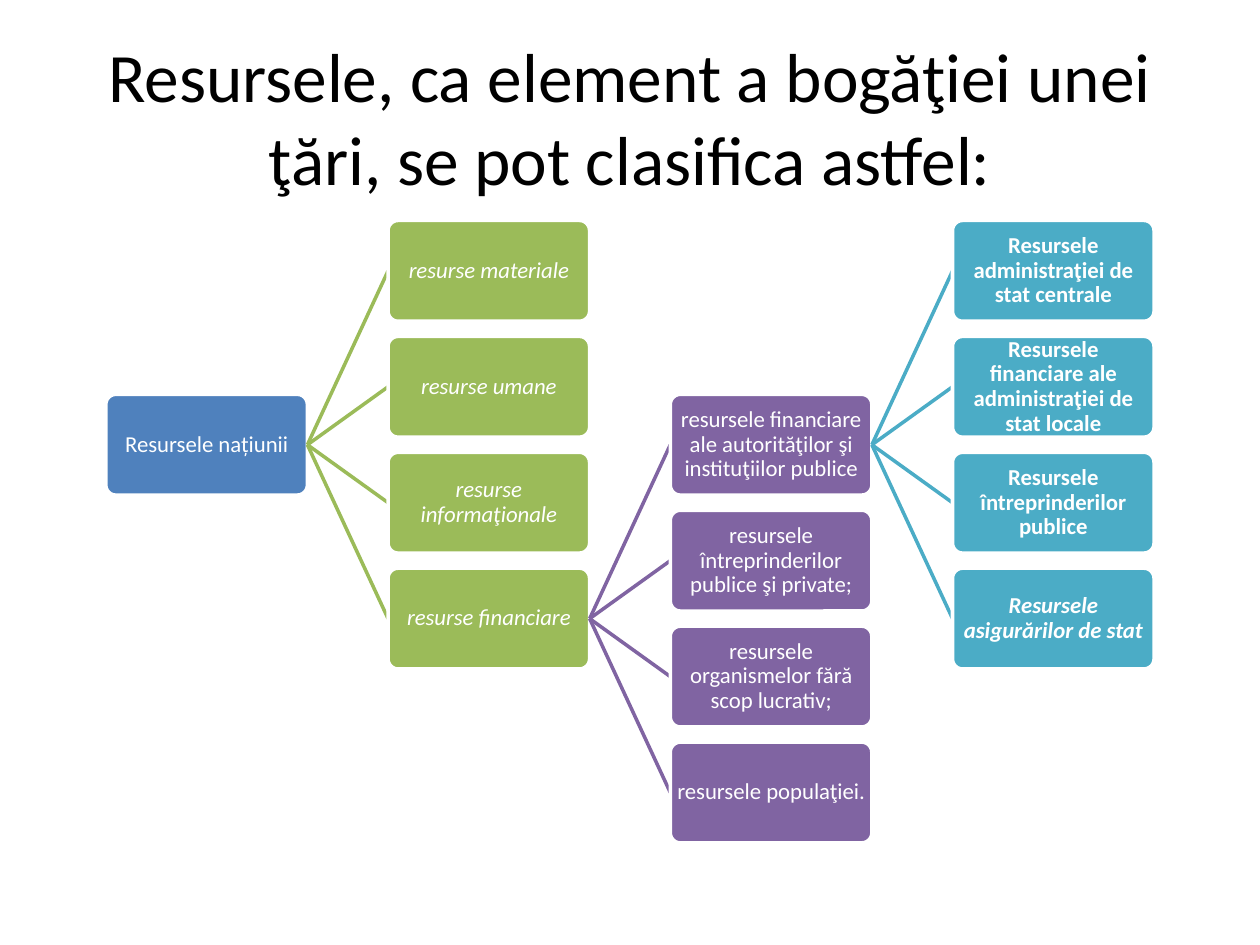
import pptx
import pptx.dml.color
import pptx.enum.shapes
import pptx.enum.text
import pptx.oxml.ns
import pptx.util
from lxml import etree
from pptx.util import Inches

LEFT, TOP = 0.84, 1.75
COLUMN_STEP, ROW_STEP = 2.24, 0.92
BOX_WIDTH, BOX_HEIGHT = 1.6, 0.8
RIGHT_SIDE, LEFT_SIDE = 3, 1
BLUE, GREEN, PURPLE, TEAL = "4F81BD", "9BBB59", "8064A2", "4BACC6"
WHITE, BLACK = "FFFFFF", "000000"
ITALIC, BOLD = {"italic": True}, {"bold": True}

MATERIAL_KINDS = [
    ("resurse materiale", ITALIC),
    ("resurse umane", ITALIC),
    ("resurse informaţionale", ITALIC),
    ("resurse financiare", ITALIC),
]
FINANCIAL_KINDS = [
    ("resursele financiare ale autorităţilor şi instituţiilor publice", {}),
    ("resursele întreprinderilor publice şi private;", {}),
    ("resursele organismelor fără scop lucrativ;", {}),
    ("resursele populaţiei.", {}),
]
PUBLIC_KINDS = [
    ("Resursele administraţiei de stat centrale", BOLD),
    ("Resursele financiare ale administraţiei de stat locale", BOLD),
    ("Resursele întreprinderilor publice", BOLD),
    ("Resursele asigurărilor de stat", {**BOLD, **ITALIC}),
]


def rgb(value):
    return pptx.dml.color.RGBColor.from_string(value)


def set_all(target, values):
    for name, value in values.items():
        setattr(target, name, value)


def write(shape, text, size, color, inset, spacing=1.0, style=None):
    """Put one centred paragraph into the shape."""
    frame = shape.text_frame
    margins = ("margin_left", "margin_top", "margin_right", "margin_bottom")
    set_all(frame, dict.fromkeys(margins, Inches(inset)))
    set_all(frame, {
        "word_wrap": True,
        "vertical_anchor": pptx.enum.text.MSO_ANCHOR.MIDDLE,
    })
    para = frame.paragraphs[0]
    set_all(para, {
        "alignment": pptx.enum.text.PP_ALIGN.CENTER,
        "line_spacing": spacing,
    })
    span = para.add_run()
    span.text = text
    font = {"name": "Calibri", "size": pptx.util.Pt(size), **(style or {})}
    set_all(span.font, font)
    span.font.color.rgb = rgb(color)


def add_title(page, text):
    box = page.shapes.add_textbox(
        Inches(0.5), Inches(0.3), Inches(9), Inches(1.25))
    write(box, text, 39.6, BLACK, 0.1)


def add_node(page, column, row, text, color, style=None):
    box = page.shapes.add_shape(
        pptx.enum.shapes.MSO_SHAPE.ROUNDED_RECTANGLE,
        Inches(LEFT + column * COLUMN_STEP), Inches(TOP + row * ROW_STEP),
        Inches(BOX_WIDTH), Inches(BOX_HEIGHT))
    box.adjustments[0] = 0.1
    box.shadow.inherit = False
    box.fill.solid()
    box.fill.fore_color.rgb = rgb(color)
    box.line.color.rgb = rgb(WHITE)
    box.line.width = pptx.util.Pt(2)
    write(box, text, 13, WHITE, 0.03, 0.9, style)
    return box


def add_link(page, color):
    link = page.shapes.add_connector(
        pptx.enum.shapes.MSO_CONNECTOR.STRAIGHT, 0, 0, 0, 0)
    link.line.color.rgb = rgb(color)
    link.line.width = pptx.util.Pt(2)
    etree.SubElement(
        link._element.spPr, pptx.oxml.ns.qn("a:effectLst"))
    return link


def add_branch(page, parent, column, first_row, color, entries):
    """Add a column of nodes, each linked to the parent from behind."""
    nodes = []
    for index, (text, style) in enumerate(entries):
        link = add_link(page, color)
        node = add_node(page, column, first_row + index, text, color, style)
        link.begin_connect(parent, RIGHT_SIDE)
        link.end_connect(node, LEFT_SIDE)
        nodes.append(node)
    return nodes


def main():
    deck = pptx.Presentation()
    set_all(deck, {"slide_width": Inches(10), "slide_height": Inches(7.5)})
    page = deck.slides.add_slide(deck.slide_layouts[6])
    add_title(
        page,
        "Resursele, ca element a bogăţiei unei ţări, se pot clasifica astfel:")
    root = add_node(page, 0, 1.5, "Resursele națiunii", BLUE)
    kinds = add_branch(page, root, 1, 0, GREEN, MATERIAL_KINDS)
    funds = add_branch(page, kinds[-1], 2, 1.5, PURPLE, FINANCIAL_KINDS)
    add_branch(page, funds[0], 3, 0, TEAL, PUBLIC_KINDS)
    deck.save("out.pptx")


if __name__ == "__main__":
    main()
